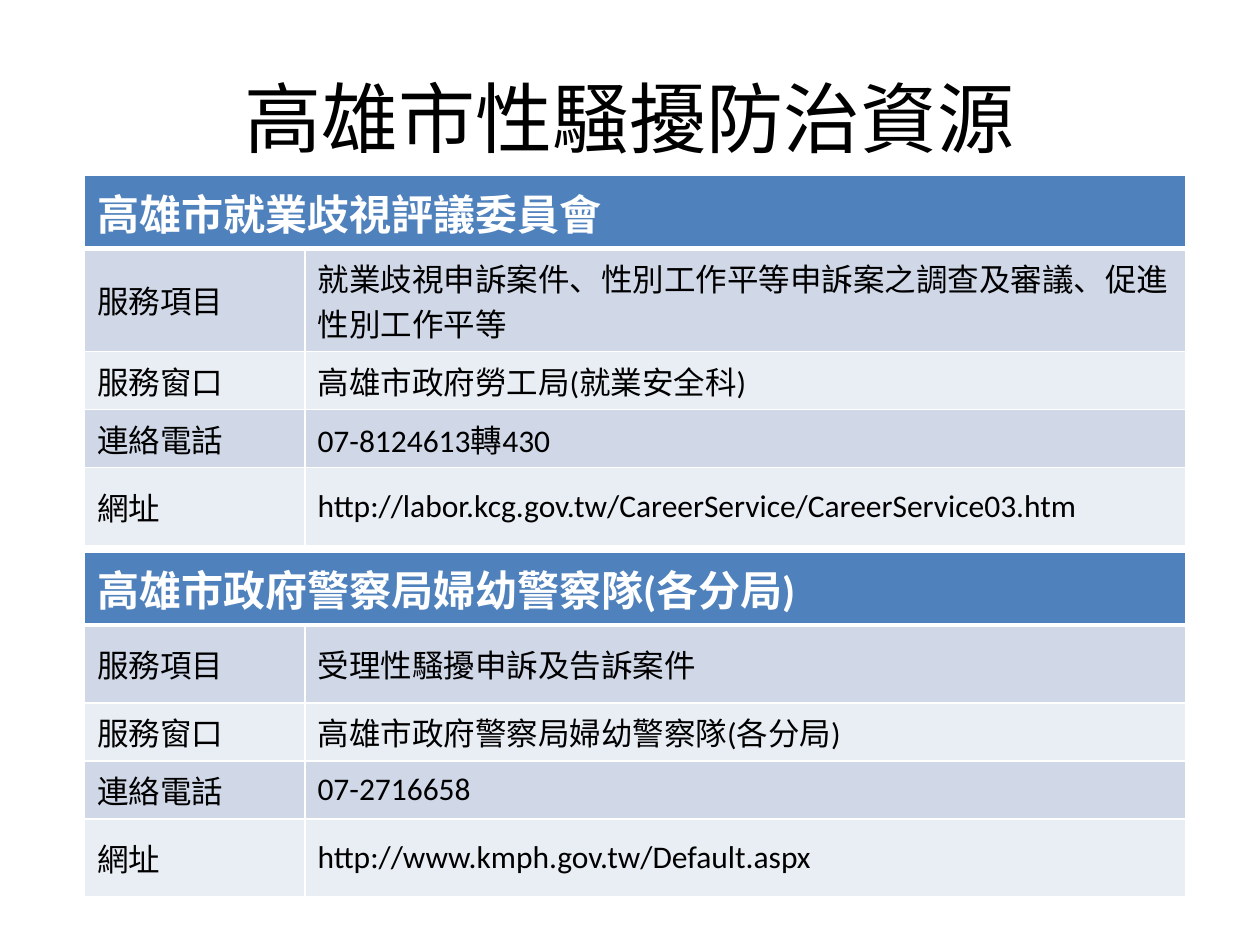
from dataclasses import dataclass

from lxml.etree import SubElement
from pptx import Presentation
from pptx.dml.color import RGBColor as Rgb
from pptx.enum.text import MSO_ANCHOR as Anchor, PP_ALIGN as Align
from pptx.oxml.ns import qn
from pptx.util import Inches, Pt


@dataclass(frozen=True)
class Theme:
    """Hold the colours, font and type sizes of the slide."""
    font: str = "Calibri"
    ink: str = "000000"
    white: str = "FFFFFF"
    header: str = "4F81BD"
    bands: tuple = ("D0D8E8", "E9EDF4")
    title_size: int = 44
    header_size: int = 24
    body_size: int = 18
    thin: int = 1
    thick: int = 3


THEME = Theme()
COLUMN_WIDTHS = (1.75, 6.99)
HEADER_HEIGHT = 0.58
LINE_HEIGHT = 0.46
TALL_HEIGHT = 0.62
WRAPPED_HEIGHT = 0.82
FIELDS = ("服務項目", "服務窗口", "連絡電話", "網址")
AGENCIES = (
    (1.39, WRAPPED_HEIGHT, "高雄市就業歧視評議委員會", (
        "就業歧視申訴案件、性別工作平等申訴案之調查及審議、促進性別工作平等",
        "高雄市政府勞工局(就業安全科)",
        "07-8124613轉430",
        "http://labor.kcg.gov.tw/CareerService/CareerService03.htm",
    )),
    (4.38, TALL_HEIGHT, "高雄市政府警察局婦幼警察隊(各分局)", (
        "受理性騷擾申訴及告訴案件",
        "高雄市政府警察局婦幼警察隊(各分局)",
        "07-2716658",
        "http://www.kmph.gov.tw/Default.aspx",
    )),
)


def write(frame, wording, size, color, bold=False, align=Align.LEFT):
    """Put one formatted paragraph into a text frame."""
    frame.text = wording
    paragraph = frame.paragraphs[0]
    paragraph.alignment = align
    for run in paragraph.runs:
        run.font.name = THEME.font
        run.font.size = Pt(size)
        run.font.bold = bold
        run.font.color.rgb = Rgb.from_string(color)


def add_title(slide, wording):
    """Add the centred slide title."""
    title = slide.shapes.add_textbox(Inches(0.5), Inches(0.3), Inches(9), Inches(1.25))
    title.text_frame.word_wrap = True
    title.text_frame.vertical_anchor = Anchor.MIDDLE
    write(title.text_frame, wording, THEME.title_size, THEME.ink, align=Align.CENTER)


def paint_cell(cell, fill, top, bottom):
    """Give a cell its white borders and its fill."""
    properties = cell._tc.get_or_add_tcPr()
    for side, width in (("L", THEME.thin), ("R", THEME.thin), ("T", top), ("B", bottom)):
        border = SubElement(properties, qn(f"a:ln{side}"), w=str(Pt(width)))
        SubElement(SubElement(border, qn("a:solidFill")), qn("a:srgbClr"), val=THEME.white)
    cell.fill.solid()
    cell.fill.fore_color.rgb = Rgb.from_string(fill)


def add_agency(slide, top, service_height, agency, details):
    """Add one agency table with a merged header and banded rows."""
    heights = (HEADER_HEIGHT, service_height, LINE_HEIGHT, LINE_HEIGHT, TALL_HEIGHT)
    table = slide.shapes.add_table(
        len(heights), len(COLUMN_WIDTHS), Inches(0.67), Inches(top),
        Inches(sum(COLUMN_WIDTHS)), Inches(sum(heights))).table
    for column, width in zip(table.columns, COLUMN_WIDTHS):
        column.width = Inches(width)
    for row, height in zip(table.rows, heights):
        row.height = Inches(height)

    heading = table.cell(0, 0)
    heading.merge(table.cell(0, 1))
    for cell in table.rows[0].cells:
        paint_cell(cell, THEME.header, THEME.thin, THEME.thick)
    write(heading.text_frame, agency, THEME.header_size, THEME.white, bold=True)

    for index, entry in enumerate(zip(FIELDS, details)):
        band = THEME.bands[index % 2]
        upper = THEME.thin if index else THEME.thick
        for cell, wording in zip(table.rows[index + 1].cells, entry):
            paint_cell(cell, band, upper, THEME.thin)
            cell.vertical_anchor = Anchor.MIDDLE
            write(cell.text_frame, wording, THEME.body_size, THEME.ink)


def main():
    """Build and save the slide."""
    deck = Presentation()
    deck.slide_width, deck.slide_height = Inches(10), Inches(7.5)
    slide = deck.slides.add_slide(deck.slide_layouts[6])
    add_title(slide, "高雄市性騷擾防治資源")
    for top, service_height, agency, details in AGENCIES:
        add_agency(slide, top, service_height, agency, details)
    deck.save("out.pptx")


if __name__ == "__main__":
    main()
